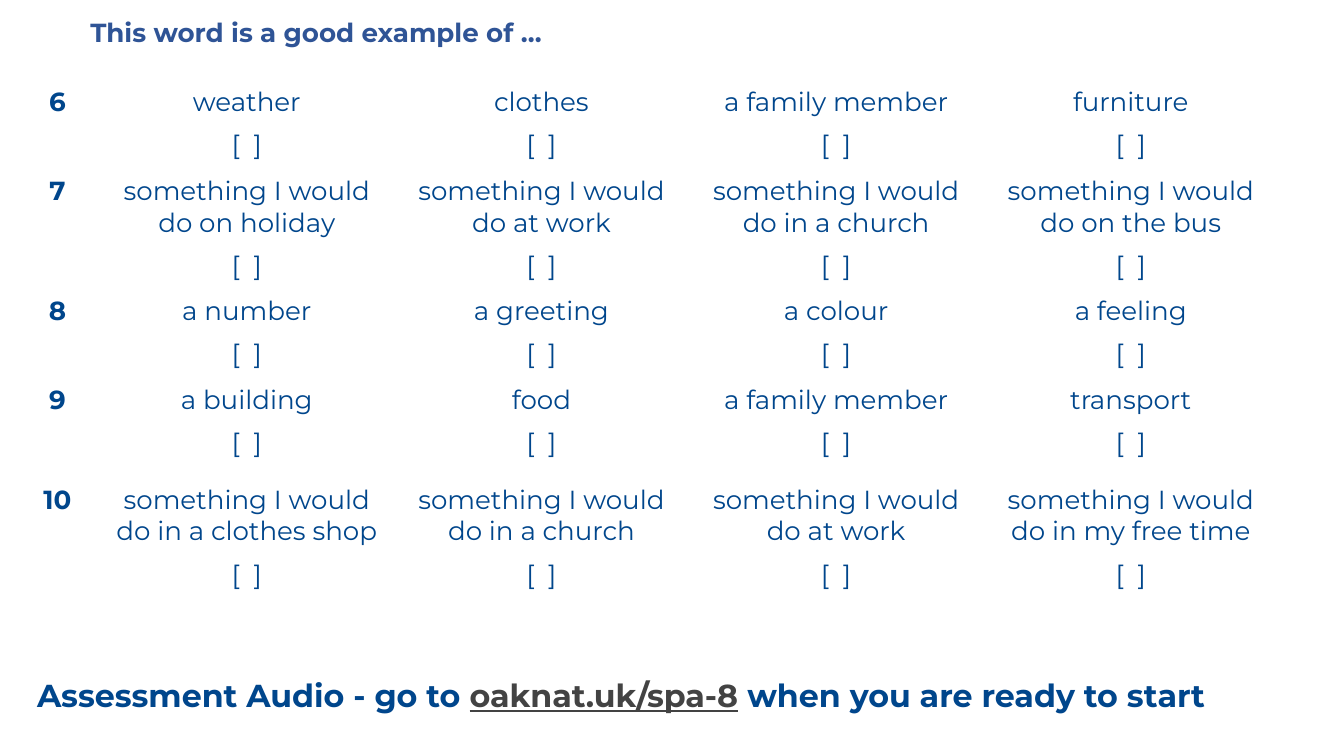
import pptx
import pptx.util
import pptx.dml.color
import pptx.enum.text

PX = 9525
NAVY = "00468C"
CENTER = pptx.enum.text.PP_ALIGN.CENTER


def px(n):
    return pptx.util.Emu(n * PX)


def write(para, text, size, color, bold=False, line=False):
    run = para.add_run()
    run.text = text
    font = run.font
    font.name = "Montserrat"
    font.size = pptx.util.Pt(size)
    font.bold = bold
    font.underline = line
    font.color.rgb = pptx.dml.color.RGBColor.from_string(color)


deck = pptx.Presentation()
deck.slide_width = px(1920)
deck.slide_height = px(1080)
slide = deck.slides.add_slide(deck.slide_layouts[6])

rows = [
    ("6", 122, ["weather", "clothes", "a family member", "furniture"]),
    ("7", 122, ["something I would do on holiday", "something I would do at work",
                "something I would do in a church", "something I would do on the bus"]),
    ("8", 122, ["a number", "a greeting", "a colour", "a feeling"]),
    ("9", 142, ["a building", "food", "a family member", "transport"]),
    ("10", 178, ["something I would do in a clothes shop", "something I would do in a church",
                 "something I would do at work", "something I would do in my free time"]),
]
widths = [120] + [421] * 4
high = sum(row[1] for row in rows)
frame = slide.shapes.add_table(len(rows), len(widths), px(22), px(113), px(sum(widths)), px(high))
table = frame.table
table.first_row = False
table.horz_banding = False
for col, width in zip(table.columns, widths):
    col.width = px(width)

for r, (number, height, words) in enumerate(rows):
    table.rows[r].height = px(height)
    for c, text in enumerate([number] + words):
        cell = table.cell(r, c)
        cell.fill.background()
        cell.margin_left = cell.margin_right = px(7)
        cell.margin_top = cell.margin_bottom = px(10)
        para = cell.text_frame.paragraphs[0]
        para.alignment = CENTER
        write(para, text, 28, NAVY, bold=c == 0)
        if c:
            para = cell.text_frame.add_paragraph()
            para.alignment = CENTER
            para.space_before = pptx.util.Pt(12)
            write(para, "[  ]", 28, NAVY)

notes = [
    (119, 14, 851, 28, [("This word is a good example of …", "2F5496", False)]),
    (43, 956, 1738, 34, [("Assessment Audio - go to ", NAVY, False),
                         ("oaknat.uk/spa-8", "434343", True),
                         (" when you are ready to start", NAVY, False)]),
]
for left, top, width, size, runs in notes:
    box = slide.shapes.add_textbox(px(left), px(top), px(width), px(78))
    body = box.text_frame
    body.word_wrap = True
    body.margin_left = body.margin_right = px(10)
    body.margin_top = body.margin_bottom = px(10)
    for text, color, line in runs:
        write(body.paragraphs[0], text, size, color, True, line)

deck.save("out.pptx")
